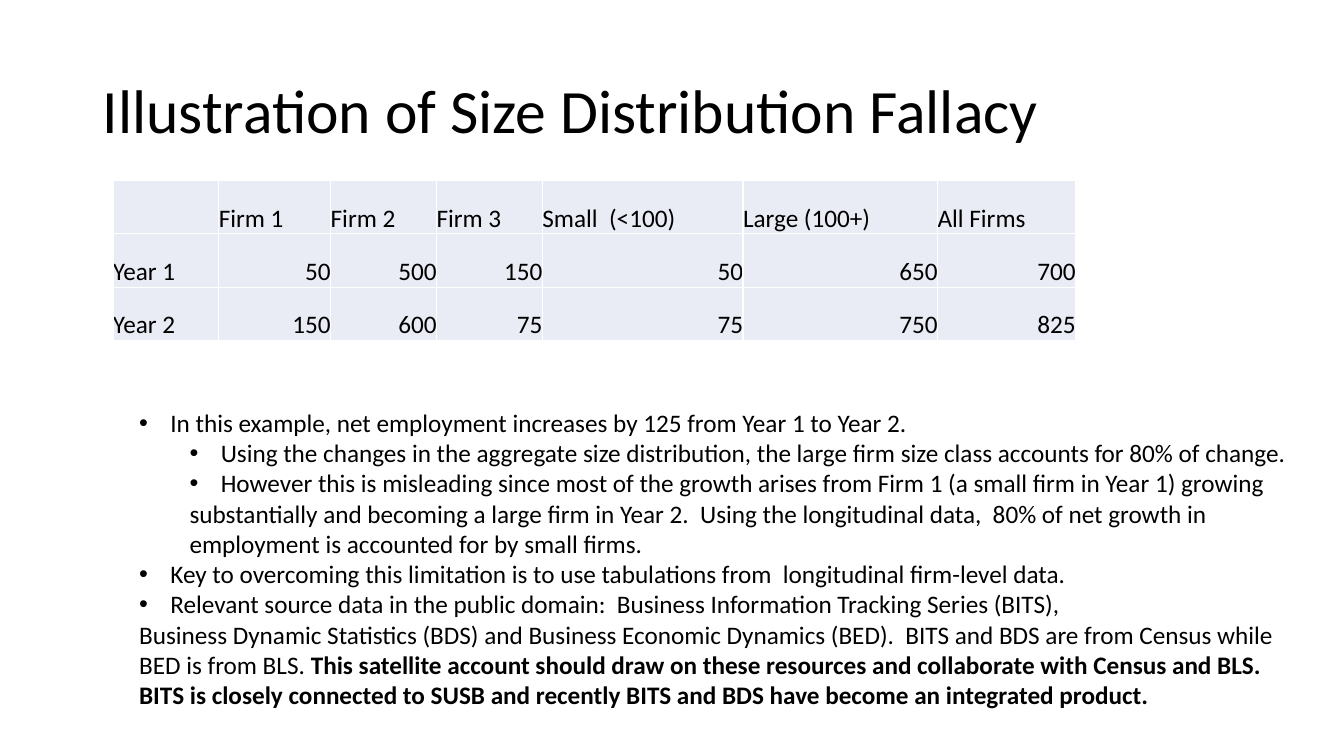
"""Build a slide that shows the size distribution fallacy with a table and notes."""
from lxml.etree import SubElement
from pptx import Presentation
from pptx.dml.color import RGBColor
from pptx.enum.text import MSO_ANCHOR, MSO_AUTO_SIZE, PP_ALIGN
from pptx.oxml.ns import qn
from pptx.util import Inches, Pt

BLACK = RGBColor(0x00, 0x00, 0x00)
WHITE = RGBColor(0xFF, 0xFF, 0xFF)
PALE_BLUE = RGBColor(0xE9, 0xEB, 0xF5)

COLUMN_WIDTHS = [1.05, 1.11, 1.05, 1.05, 1.99, 1.93, 1.37]
FIRM_ROWS = [
    ["", "Firm 1", "Firm 2", "Firm 3", "Small  (<100)", "Large (100+)", "All Firms"],
    ["Year 1", "50", "500", "150", "50", "650", "700"],
    ["Year 2", "150", "600", "75", "75", "750", "825"],
]

INDENTS = {
    "point": (0, 0.31, -0.31),
    "subpoint": (1, 0.81, -0.31),
    "subline": (1, 0.5, 0),
    "line": (0, 0, 0),
}
NOTES = [
    ("point", [("In this example, net employment increases by 125 from Year 1 to Year 2.", False)]),
    ("subpoint", [("Using the changes in the aggregate size distribution, the large firm size class "
                   "accounts for 80% of change.", False)]),
    ("subpoint", [("However this is misleading since most of the growth arises from Firm 1 "
                   "(a small firm in Year 1) growing", False)]),
    ("subline", [("substantially and becoming a large firm in Year 2.  Using the longitudinal data,  "
                  "80% of net growth in", False)]),
    ("subline", [("employment is accounted for by small firms.", False)]),
    ("point", [("Key to overcoming this limitation is to use tabulations from  "
                "longitudinal firm-level data.", False)]),
    ("point", [("Relevant source data in the public domain:  "
                "Business Information Tracking Series (BITS),", False)]),
    ("line", [("Business Dynamic Statistics (BDS) and Business Economic Dynamics (BED).  "
               "BITS and BDS are from Census while", False)]),
    ("line", [("BED is from BLS. ", False),
              ("This satellite account should draw on these resources and collaborate "
               "with Census and BLS.", True)]),
    ("line", [("BITS is closely connected to SUSB and recently BITS and BDS have become "
               "an integrated product.", True)]),
]


def apply_format(target, values):
    """Set every attribute named in a dict of format values."""
    for name, value in values.items():
        setattr(target, name, value)


class SlideBuilder:
    """Hold the text style and the current page, and add its elements."""

    def __init__(self, page, font_name="Calibri", text_size=18):
        self.page = page
        self.font_name = font_name
        self.text_size = text_size

    def place(self, box, left, top, width, height):
        """Move and size a box in inches."""
        sizes = {"left": left, "top": top, "width": width, "height": height}
        apply_format(box, {name: Inches(value) for name, value in sizes.items()})

    def add_span(self, para, text, size=None, bold=False):
        """Add one styled span to a paragraph."""
        span = para.add_run()
        span.text = text
        apply_format(span.font, {"name": self.font_name, "size": Pt(size or self.text_size), "bold": bold})
        span.font.color.rgb = BLACK

    def title(self, text, area):
        """Fill the title placeholder."""
        box = self.page.shapes.title
        self.place(box, *area)
        apply_format(box.text_frame, {"vertical_anchor": MSO_ANCHOR.MIDDLE, "auto_size": MSO_AUTO_SIZE.NONE})
        para = box.text_frame.paragraphs[0]
        apply_format(para, {"alignment": PP_ALIGN.LEFT, "line_spacing": 0.9})
        self.add_span(para, text, 44)

    def table(self, rows, widths, left, top, row_height):
        """Add a plain table with labels at left and numbers at right."""
        frame = self.page.shapes.add_table(
            len(rows), len(widths), Inches(left), Inches(top),
            Inches(sum(widths)), Inches(row_height * len(rows)))
        grid = frame.table
        apply_format(grid, {"first_row": False, "horz_banding": False})
        for column, width in zip(grid.columns, widths):
            column.width = Inches(width)
        for row, texts in zip(grid.rows, rows):
            row.height = Inches(row_height)
            for cell, text in zip(row.cells, texts):
                self.cell(cell, text)

    def cell(self, cell, text):
        """Style one cell and fill in its text."""
        apply_format(cell, {
            "vertical_anchor": MSO_ANCHOR.BOTTOM, "margin_left": 0,
            "margin_right": 0, "margin_top": 0, "margin_bottom": 0})
        properties = cell._tc.get_or_add_tcPr()
        for side in ("lnL", "lnR", "lnT", "lnB"):
            border = SubElement(properties, qn(f"a:{side}"), w=str(Pt(1)))
            fill = SubElement(border, qn("a:solidFill"))
            SubElement(fill, qn("a:srgbClr"), val=str(WHITE))
        cell.fill.solid()
        cell.fill.fore_color.rgb = PALE_BLUE
        if text:
            para = cell.text_frame.paragraphs[0]
            para.alignment = PP_ALIGN.RIGHT if text.isdigit() else PP_ALIGN.LEFT
            self.add_span(para, text)

    def notes(self, items, area):
        """Fill the body placeholder with bulleted points and plain lines."""
        box = self.page.placeholders[1]
        self.place(box, *area)
        frame = box.text_frame
        apply_format(frame, {
            "word_wrap": False, "auto_size": MSO_AUTO_SIZE.SHAPE_TO_FIT_TEXT,
            "vertical_anchor": MSO_ANCHOR.TOP})
        for index, (kind, spans) in enumerate(items):
            para = frame.add_paragraph() if index else frame.paragraphs[0]
            level, margin, indent = INDENTS[kind]
            apply_format(para, {
                "level": level, "alignment": PP_ALIGN.LEFT, "line_spacing": 1.0,
                "space_before": Pt(0), "space_after": Pt(0)})
            properties = para._p.get_or_add_pPr()
            properties.set("marL", str(Inches(margin)))
            properties.set("indent", str(Inches(indent)))
            if indent:
                SubElement(properties, qn("a:buFont"), typeface="Arial")
                SubElement(properties, qn("a:buChar"), char="•")
            else:
                SubElement(properties, qn("a:buNone"))
            for text, bold in spans:
                self.add_span(para, text, bold=bold)


def main():
    """Build the deck and save it."""
    deck = Presentation()
    apply_format(deck, {"slide_width": Inches(13.33), "slide_height": Inches(7.5)})
    builder = SlideBuilder(deck.slides.add_slide(deck.slide_layouts[1]))
    builder.title("Illustration of Size Distribution Fallacy", (0.92, 0.4, 11.5, 1.45))
    builder.table(FIRM_ROWS, COLUMN_WIDTHS, 1.12, 1.79, 0.53)
    builder.notes(NOTES, (1.28, 3.99, 11.72, 3.13))
    deck.save("out.pptx")


if __name__ == "__main__":
    main()
